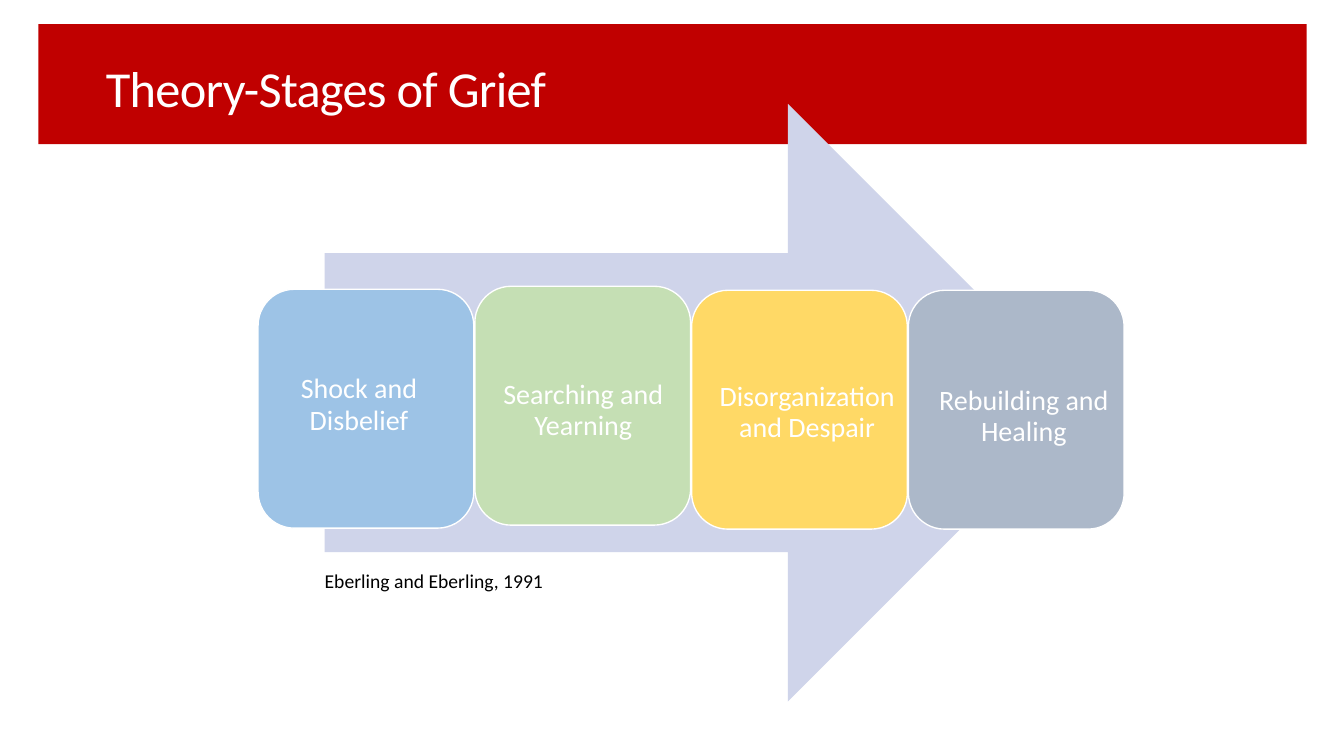
import dataclasses
import typing

import pptx
import pptx.dml.color
import pptx.enum.shapes
import pptx.enum.text
import pptx.util

Inches = pptx.util.Inches
Pt = pptx.util.Pt
Preset = pptx.enum.shapes.MSO_SHAPE
Anchor = pptx.enum.text.MSO_ANCHOR
Align = pptx.enum.text.PP_ALIGN


@dataclasses.dataclass(frozen=True)
class Theme:
    font: str = "Calibri"
    banner: str = "C00000"
    arrow: str = "CFD4EA"
    light: str = "FFFFFF"
    dark: str = "000000"
    title_size: float = 36
    stage_size: float = 20
    citation_size: float = 14
    outline: float = 0.96


class Box(typing.NamedTuple):
    left: float
    top: float
    width: float
    height: float

    def lengths(self) -> list:
        return [Inches(value) for value in self]


@dataclasses.dataclass(frozen=True)
class Stage:
    name: str
    fill: str
    top: float
    label: Box
    inset: float = 0.1
    leading: float = 22.1


THEME = Theme()
CARD_LEFT, CARD_STEP = 2.56, 2.15
CARD_WIDTH, CARD_HEIGHT, CARD_RADIUS = 2.14, 2.37, 0.36

STAGES = [
    Stage("Shock and Disbelief", "9DC3E6", 2.87, Box(2.97, 3.66, 1.18, 0.67), 0.03, 23.1),
    Stage("Searching and Yearning", "C5DFB4", 2.84, Box(4.98, 3.66, 1.61, 0.67)),
    Stage("Disorganization and Despair", "FFD966", 2.88, Box(7.12, 3.68, 1.77, 0.67)),
    Stage("Rebuilding and Healing", "ACB8C9", 2.88, Box(9.3, 3.72, 1.71, 0.67)),
]


def rgb(code: str) -> pptx.dml.color.RGBColor:
    return pptx.dml.color.RGBColor.from_string(code)


def apply(target: typing.Any, values: dict) -> None:
    for name, value in values.items():
        setattr(target, name, value)


def add_block(slide, preset, box: Box, fill: str, outline: typing.Optional[str] = None):
    """Draw a filled preset shape, outlined only when a colour is given."""
    block = slide.shapes.add_shape(preset, *box.lengths())
    block.shadow.inherit = False
    block.fill.solid()
    block.fill.fore_color.rgb = rgb(fill)
    if outline:
        block.line.color.rgb = rgb(outline)
        block.line.width = Pt(THEME.outline)
    else:
        block.line.fill.background()
    return block


def add_text(slide, text: str, box: Box, size: float, color: str, inset: float = 0.03,
             anchor=Anchor.TOP, align=Align.LEFT, leading: typing.Optional[float] = None,
             tracking: float = 0) -> None:
    """Write one paragraph in a wrapping text box."""
    frame = slide.shapes.add_textbox(*box.lengths()).text_frame
    apply(frame, {"word_wrap": True, "vertical_anchor": anchor, "margin_left": 0,
                  "margin_right": 0, "margin_bottom": 0, "margin_top": Inches(inset)})
    paragraph = frame.paragraphs[0]
    paragraph.alignment = align
    if leading:
        paragraph.line_spacing = Pt(leading)
    run = paragraph.add_run()
    run.text = text
    apply(run.font, {"name": THEME.font, "size": Pt(size)})
    run.font.color.rgb = rgb(color)
    if tracking:
        run.font._element.set("spc", str(round(tracking * 100)))


def add_stage(slide, stage: Stage, index: int) -> None:
    """Draw the card of one stage and its label."""
    box = Box(CARD_LEFT + index * CARD_STEP, stage.top, CARD_WIDTH, CARD_HEIGHT)
    card = add_block(slide, Preset.ROUNDED_RECTANGLE, box, stage.fill, THEME.light)
    card.adjustments[0] = CARD_RADIUS / CARD_WIDTH
    add_text(slide, stage.name, stage.label, THEME.stage_size, THEME.light,
             inset=stage.inset, align=Align.CENTER, leading=stage.leading)


def main() -> None:
    deck = pptx.Presentation()
    apply(deck, {"slide_width": Inches(13.33), "slide_height": Inches(7.5)})
    slide = deck.slides.add_slide(deck.slide_layouts[6])

    # Title banner
    add_block(slide, Preset.RECTANGLE, Box(0.38, 0.24, 12.58, 1.19), THEME.banner)
    add_text(slide, "Theory-Stages of Grief", Box(1.05, 0.54, 4.55, 0.63),
             THEME.title_size, THEME.light, anchor=Anchor.MIDDLE, tracking=-0.5)

    # Arrow behind the stages
    add_block(slide, Preset.RIGHT_ARROW, Box(3.22, 1.03, 7.56, 5.93), THEME.arrow)

    # Stages of grief
    for index, stage in enumerate(STAGES):
        add_stage(slide, stage, index)

    # Citation
    add_text(slide, "Eberling and Eberling, 1991", Box(3.22, 5.61, 2.52, 0.25),
             THEME.citation_size, THEME.dark)

    deck.save("out.pptx")


if __name__ == "__main__":
    main()
